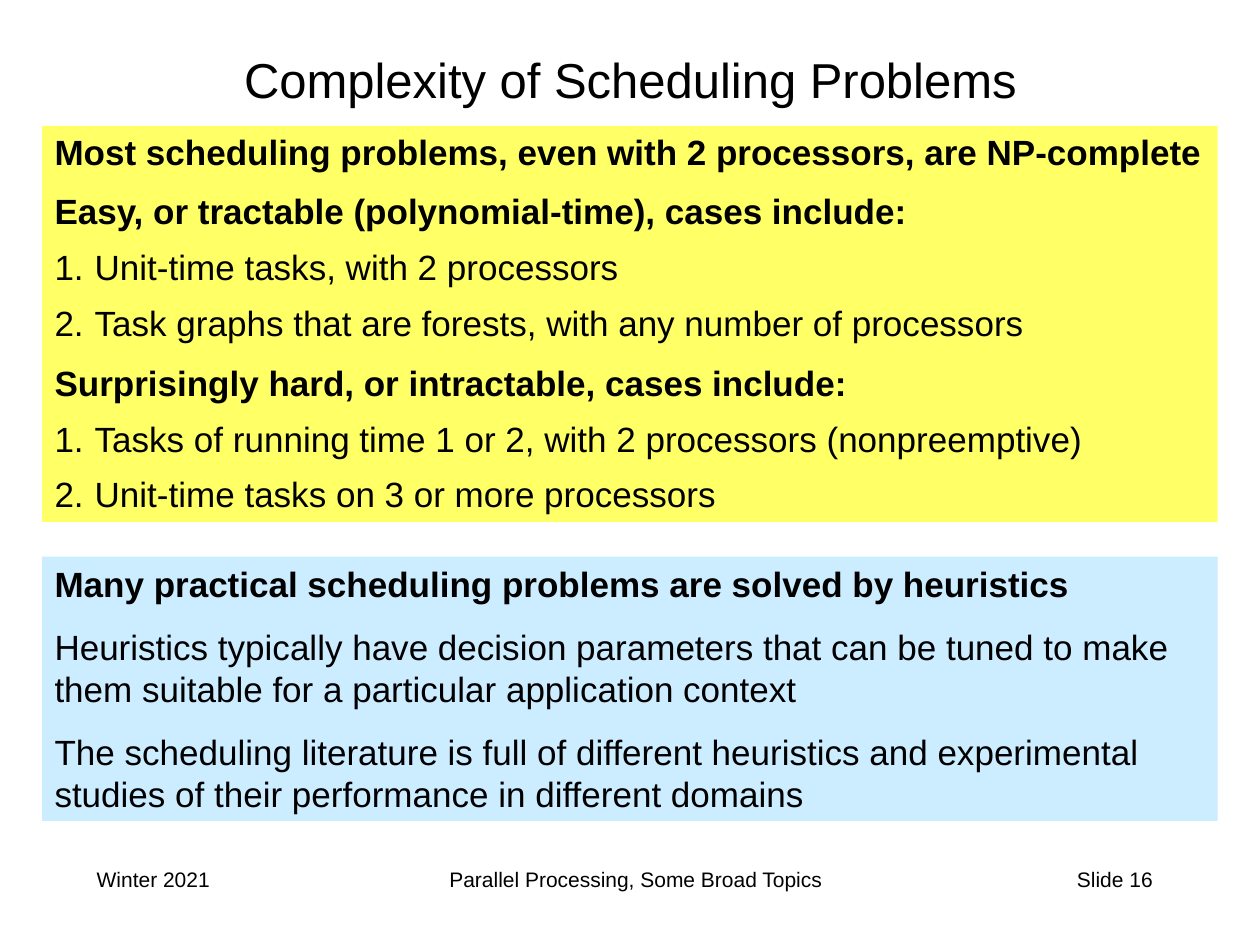
from dataclasses import dataclass

import pptx
import pptx.dml.color
import pptx.enum.shapes
import pptx.enum.text
import pptx.util

Cm = pptx.util.Cm
Pt = pptx.util.Pt
RGB = pptx.dml.color.RGBColor
ALIGN = pptx.enum.text.PP_ALIGN
ANCHOR = pptx.enum.text.MSO_ANCHOR


@dataclass(frozen=True)
class Theme:
    font: str = "Arial"
    ink: str = "000000"
    yellow: str = "FFFF66"
    blue: str = "CCECFF"
    title_size: float = 28
    body_size: float = 20
    footer_size: float = 12


THEME = Theme()

COMPLEXITY = [
    ("Most scheduling problems, even with 2 processors, are NP-complete", True, 0),
    ("Easy, or tractable (polynomial-time), cases include:", True, 11.4),
    ("1.\tUnit-time tasks, with 2 processors", False, 9.12),
    ("2.\tTask graphs that are forests, with any number of processors", False, 9.12),
    ("Surprisingly hard, or intractable, cases include:", True, 11.4),
    ("1.\tTasks of running time 1 or 2, with 2 processors (nonpreemptive)", False, 9.12),
    ("2.\tUnit-time tasks on 3 or more processors", False, 9.12),
]
HEURISTICS = [
    ("Many practical scheduling problems are solved by heuristics", True, 0),
    ("Heuristics typically have decision parameters that can be tuned to make "
     "them suitable for a particular application context", False, 12),
    ("The scheduling literature is full of different heuristics and experimental "
     "studies of their performance in different domains", False, 12),
]


def style(font, size, bold=False):
    font.name = THEME.font
    font.size = Pt(size)
    font.bold = bold
    font.color.rgb = RGB.from_string(THEME.ink)


def add_label(s, box, text, size, align, anchor=ANCHOR.TOP):
    tf = s.shapes.add_textbox(*map(Cm, box)).text_frame
    tf.word_wrap = True
    tf.vertical_anchor = anchor
    p = tf.paragraphs[0]
    p.text = text
    p.alignment = align
    style(p.font, size)


def add_panel(s, top, height, fill, lines, leading, hanging=0):
    sp = s.shapes.add_shape(pptx.enum.shapes.MSO_SHAPE.RECTANGLE,
                            Cm(0.85), Cm(top), Cm(23.7), Cm(height))
    sp.shadow.inherit = False
    sp.fill.solid()
    sp.fill.fore_color.rgb = RGB.from_string(fill)
    sp.line.fill.background()
    tf = sp.text_frame
    tf.word_wrap = True
    tf.vertical_anchor = ANCHOR.TOP
    for i, (text, bold, gap) in enumerate(lines):
        p = tf.add_paragraph() if i else tf.paragraphs[0]
        p.text = text
        p.alignment = ALIGN.LEFT
        p.line_spacing = Pt(leading)
        p.space_before = Pt(gap)
        if hanging:
            pPr = p._p.get_or_add_pPr()
            pPr.set("marL", str(Cm(hanging)))
            pPr.set("indent", str(-Cm(hanging)))
        style(p.font, THEME.body_size, bold)


def main():
    prs = pptx.Presentation()
    prs.slide_width, prs.slide_height = Cm(25.4), Cm(19.05)
    s = prs.slides.add_slide(prs.slide_layouts[6])

    for left, width, text, align in (
        (1.7, 5.28, "Winter 2021", ALIGN.LEFT),
        (6.15, 13.34, "Parallel Processing, Some Broad Topics", ALIGN.CENTER),
        (18.21, 5.28, "Slide 16", ALIGN.RIGHT),
    ):
        add_label(s, (left, 17.35, width, 1.27), text, THEME.footer_size, align)
    add_label(s, (0.64, 0.64, 24.13, 1.9), "Complexity of Scheduling Problems",
              THEME.title_size, ALIGN.CENTER, ANCHOR.MIDDLE)
    add_panel(s, 2.54, 7.98, THEME.yellow, COMPLEXITY, 22.8, hanging=0.81)
    add_panel(s, 11.22, 5.33, THEME.blue, HEURISTICS, 24)

    prs.save("out.pptx")


if __name__ == "__main__":
    main()
